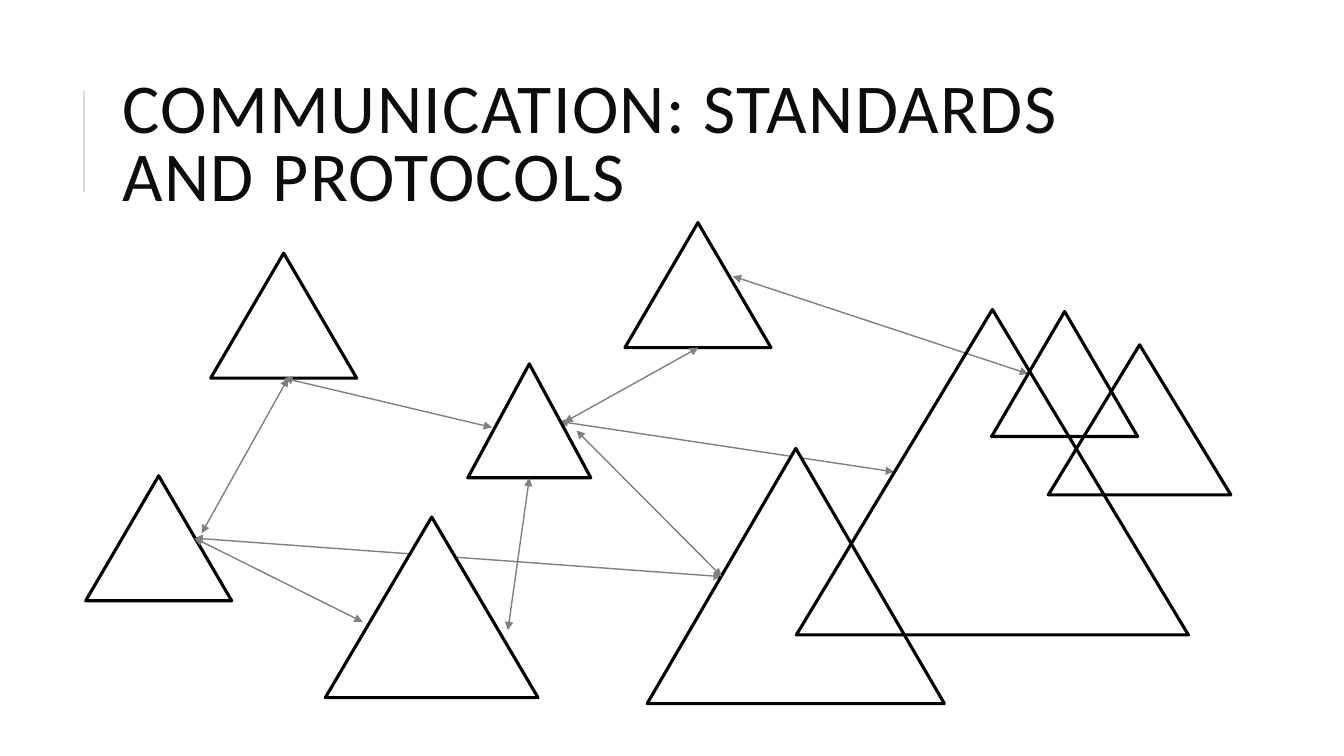
"""Build a slide of triangles linked by two-way arrows."""
from lxml.etree import SubElement
from pptx import Presentation
from pptx.dml.color import RGBColor
from pptx.enum.shapes import MSO_CONNECTOR, MSO_SHAPE
from pptx.enum.text import MSO_ANCHOR
from pptx.oxml.ns import qn
from pptx.util import Cm, Pt

TITLE = "COMMUNICATION: STANDARDS AND PROTOCOLS"
INK = RGBColor(0x0D, 0x0D, 0x0D)
BLACK = RGBColor(0, 0, 0)
WHITE = RGBColor(0xFF, 0xFF, 0xFF)
GRAY = RGBColor(0x80, 0x80, 0x80)
RULE = RGBColor(0xDD, 0xDD, 0xDD)

SMALL = (3.68, 3.15)
TRIANGLES = [
    ((5.31, 6.38), SMALL, None),
    ((11.79, 9.17), (3.1, 2.87), WHITE),
    ((2.16, 11.99), SMALL, None),
    ((8.2, 13.03), (5.36, 4.55), WHITE),
    ((16.31, 11.3), (7.49, 6.43), WHITE),
    ((24.99, 7.85), SMALL, None),
    ((20.07, 7.8), (9.88, 8.2), None),
    ((26.42, 8.69), (4.6, 3.78), None),
    ((15.75, 5.61), SMALL, None),
]
LEFT_HUB = (4.9, 13.56)
RIGHT_HUB = (18.19, 14.53)
BACK_ARROWS = [
    ((25.91, 9.42), (18.47, 6.96)),
    ((22.53, 11.89), (14.1, 10.62)),
    (RIGHT_HUB, LEFT_HUB),
]
FRONT_ARROWS = [
    ((7.26, 9.53), (5.08, 13.44)),
    ((7.16, 9.53), (12.4, 10.77)),
    ((9.14, 15.67), LEFT_HUB),
    ((17.6, 8.76), (14.22, 10.64)),
    (RIGHT_HUB, (14.53, 10.85)),
    ((13.34, 12.04), (12.8, 15.88)),
]


def add_line(s, start, end, color=GRAY, width=1, arrows=True):
    c = s.shapes.add_connector(MSO_CONNECTOR.STRAIGHT, *map(Cm, start + end))
    c.line.color.rgb = color
    c.line.width = Pt(width)
    if arrows:
        ln = c.line._get_or_add_ln()
        for tag in ("a:headEnd", "a:tailEnd"):
            SubElement(ln, qn(tag), type="triangle")
    SubElement(c._element.spPr, qn("a:effectLst"))


def add_triangle(s, corner, size, fill):
    sp = s.shapes.add_shape(MSO_SHAPE.ISOSCELES_TRIANGLE, *map(Cm, corner + size))
    sp.shadow.inherit = False
    if fill is None:
        sp.fill.background()
    else:
        sp.fill.solid()
        sp.fill.fore_color.rgb = fill
    sp.line.color.rgb = BLACK
    sp.line.width = Pt(2.25)


def add_text(s, text, box, size, color, font="Calibri", leading=1.0, tracking=0):
    tf = s.shapes.add_textbox(*map(Cm, box)).text_frame
    tf.word_wrap = True
    tf.vertical_anchor = MSO_ANCHOR.MIDDLE
    p = tf.paragraphs[0]
    p.line_spacing = leading
    r = p.add_run()
    r.text = text
    r.font.name = font
    r.font.size = Pt(size)
    r.font.color.rgb = color
    r._r.get_or_add_rPr().set("spc", str(tracking * 100))


def main():
    prs = Presentation()
    prs.slide_width, prs.slide_height = Cm(33.87), Cm(19.05)
    s = prs.slides.add_slide(prs.slide_layouts[6])
    add_line(s, (2.11, 4.83), (2.11, 2.29), color=RULE, width=1.5, arrows=False)
    for start, end in BACK_ARROWS:
        add_line(s, start, end)
    add_text(s, TITLE, (2.84, 1.63, 27, 4.17), size=50, color=INK,
             leading=0.8, tracking=1)
    for corner, size, fill in TRIANGLES:
        add_triangle(s, corner, size, fill)
    for start, end in FRONT_ARROWS:
        add_line(s, start, end)
    prs.save("out.pptx")


if __name__ == "__main__":
    main()
